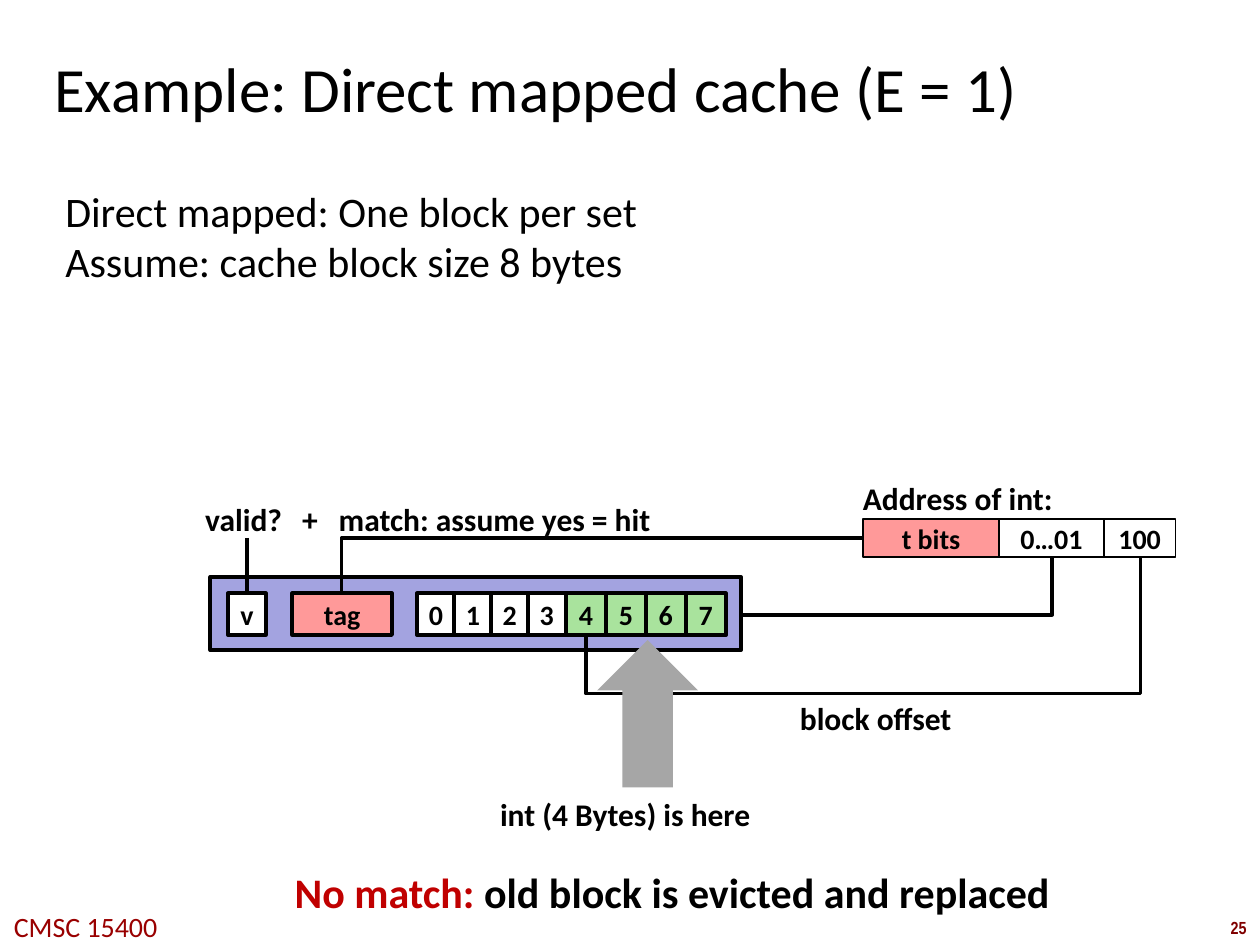
from lxml import etree
from pptx import Presentation
from pptx import util as u
from pptx.dml.color import RGBColor
from pptx.enum import shapes, text
from pptx.oxml import ns

COLORS = {
    "black": "000000", "white": "FFFFFF", "tag": "FF9999", "line": "A3A3E0",
    "int": "A9E39D", "arrow": "A6A6A6", "alert": "C00000",
    "course": "990000", "page": "800000",
}


def rgb(name):
    """Return the named colour."""
    return RGBColor.from_string(COLORS[name])


def write(frame, paragraphs, size=18, bold=True, color="black", font="Calibri",
          align="LEFT", anchor="TOP", wrap=False, tab=None):
    """Fill a frame with paragraphs, each a string or a list of (text, colour) runs."""
    frame.word_wrap = wrap
    frame.vertical_anchor = getattr(text.MSO_ANCHOR, anchor)
    for index, content in enumerate(paragraphs):
        paragraph = frame.paragraphs[0] if index == 0 else frame.add_paragraph()
        paragraph.alignment = getattr(text.PP_ALIGN, align)
        if tab:
            stops = etree.SubElement(paragraph._p.get_or_add_pPr(), ns.qn("a:tabLst"))
            etree.SubElement(stops, ns.qn("a:tab"), pos=str(u.Inches(tab)), algn="l")
        runs = [(content, color)] if isinstance(content, str) else content
        for words, run_color in runs:
            run = paragraph.add_run()
            run.text = words
            run.font.name = font
            run.font.size = u.Pt(size)
            run.font.bold = bold
            run.font.color.rgb = rgb(run_color)


def add_label(slide, left, top, width, height, *paragraphs, **text_format):
    """Add a text box that grows with its text."""
    label = slide.shapes.add_textbox(*map(u.Inches, (left, top, width, height)))
    write(label.text_frame, paragraphs, **text_format)
    label.text_frame.auto_size = text.MSO_AUTO_SIZE.SHAPE_TO_FIT_TEXT


def add_block(slide, left, top, width, height, fill, words="", border=2.25,
              kind=shapes.MSO_SHAPE.RECTANGLE):
    """Add a filled shape with an optional border and centred text."""
    block = slide.shapes.add_shape(kind, *map(u.Inches, (left, top, width, height)))
    block.shadow.inherit = False
    block.fill.solid()
    block.fill.fore_color.rgb = rgb(fill)
    if border:
        block.line.color.rgb = rgb("black")
        block.line.width = u.Pt(border)
    else:
        block.line.fill.background()
    if words:
        write(block.text_frame, [words], size=16, align="CENTER", anchor="MIDDLE")
    return block


def add_wire(slide, start, end, kind=shapes.MSO_CONNECTOR.STRAIGHT):
    """Add a black connector without a shadow."""
    wire = slide.shapes.add_connector(kind, *map(u.Inches, (*start, *end)))
    wire.line.color.rgb = rgb("black")
    wire.line.width = u.Pt(2)
    etree.SubElement(wire._element.spPr, ns.qn("a:effectLst"))
    return wire


def add_elbow(slide, start, end, preset, turn, flip=False, bend=None):
    """Add a bent connector turned by 90 or 180 degrees."""
    wire = add_wire(slide, start, end, shapes.MSO_CONNECTOR.ELBOW)
    width, height = abs(end[0] - start[0]), abs(end[1] - start[1])
    if turn == 90:
        width, height = height, width
    wire.left = u.Inches((start[0] + end[0] - width) / 2)
    wire.top = u.Inches((start[1] + end[1] - height) / 2)
    wire.width, wire.height = u.Inches(width), u.Inches(height)
    frame = wire._element.spPr.find(ns.qn("a:xfrm"))
    frame.attrib.clear()
    frame.set("rot", str(turn * 60000))
    if flip:
        frame.set("flipV", "1")
    geometry = wire._element.spPr.find(ns.qn("a:prstGeom"))
    geometry.set("prst", preset)
    if bend:
        guides = geometry.find(ns.qn("a:avLst"))
        etree.SubElement(guides, ns.qn("a:gd"), name="adj1",
                         fmla=f"val {round(bend * 100000)}")


def add_address(slide):
    """Draw the three fields of the address."""
    left = 6.85
    for words, width, fill in (("t bits", 1.08, "tag"), ("0…01", 0.83, "white"),
                               ("100", 0.57, "white")):
        add_block(slide, left, 4.12, width, 0.3, fill, words, border=1)
        left += width
    add_label(slide, 6.75, 3.75, 1.72, 0.4, "Address of int:")


def add_cache_line(slide):
    """Draw the cache line and return its valid bit."""
    add_block(slide, 1.67, 4.58, 4.21, 0.58, "line")
    top, height = 4.71, 0.33
    for byte in range(4):
        add_block(slide, 3.31 + 0.293 * byte, top, 0.3, height, "white", str(byte))
    add_block(slide, 2.32, top, 0.79, height, "tag", "tag")
    valid = add_block(slide, 1.81, top, 0.3, height, "white", "v")
    for byte in range(4, 8):
        add_block(slide, 4.49 + 0.317 * (byte - 4), top, 0.32, height, "int", str(byte))
    return valid


def add_lookup(slide, valid):
    """Wire the address fields to the cache line and label the steps."""
    add_elbow(slide, (8.35, 4.42), (5.88, 4.88), "bentConnector2", 90)
    add_elbow(slide, (6.85, 4.27), (2.71, 4.71), "bentConnector2", 180, flip=True)
    add_label(slide, 2.59, 3.92, 2.7, 0.4, "match: assume yes = hit")
    add_wire(slide, (1.96, 4.27), (1.96, 4.71)).end_connect(valid, 0)
    add_label(slide, 1.53, 3.92, 1.12, 0.4, "valid?\t+", tab=0.77)
    add_elbow(slide, (9.05, 4.42), (4.65, 5.04), "bentConnector3", 90, bend=1.75)
    add_block(slide, 4.74, 5.08, 0.8, 1.17, "arrow", border=0,
              kind=shapes.MSO_SHAPE.UP_ARROW)
    add_label(slide, 3.87, 6.26, 2.21, 0.4, "int (4 Bytes) is here")
    add_label(slide, 6.25, 5.5, 1.42, 0.4, "block offset")


def main():
    """Build and save the slide."""
    deck = Presentation()
    deck.slide_width, deck.slide_height = u.Inches(10), u.Inches(7.5)
    slide = deck.slides.add_slide(deck.slide_layouts[6])
    add_label(slide, 9.66, 7.23, 0.34, 0.27, "25", size=10, color="page",
              font="Arial Narrow", align="CENTER")
    add_label(slide, -0.03, 7.17, 1.42, 0.37, "CMSC 15400", size=16, bold=False,
              color="course", align="CENTER")
    add_address(slide)
    valid = add_cache_line(slide)
    add_lookup(slide, valid)
    add_label(slide, 2.24, 6.83, 6.25, 0.5,
              [("No match: ", "alert"), ("old block is evicted and replaced", "black")],
              size=24)
    add_label(slide, 0.42, 1.42, 4.77, 0.91, "Direct mapped: One block per set",
              "Assume: cache block size 8 bytes", size=24, bold=False)
    title = slide.shapes.add_textbox(*map(u.Inches, (0.39, 0.28, 8.3, 0.83))).text_frame
    title.margin_left = title.margin_right = u.Inches(0.04)
    title.margin_top = title.margin_bottom = u.Inches(0.04)
    write(title, ["Example: Direct mapped cache (E = 1)"], size=36, bold=False,
          anchor="MIDDLE", wrap=True)
    deck.save("out.pptx")


if __name__ == "__main__":
    main()
